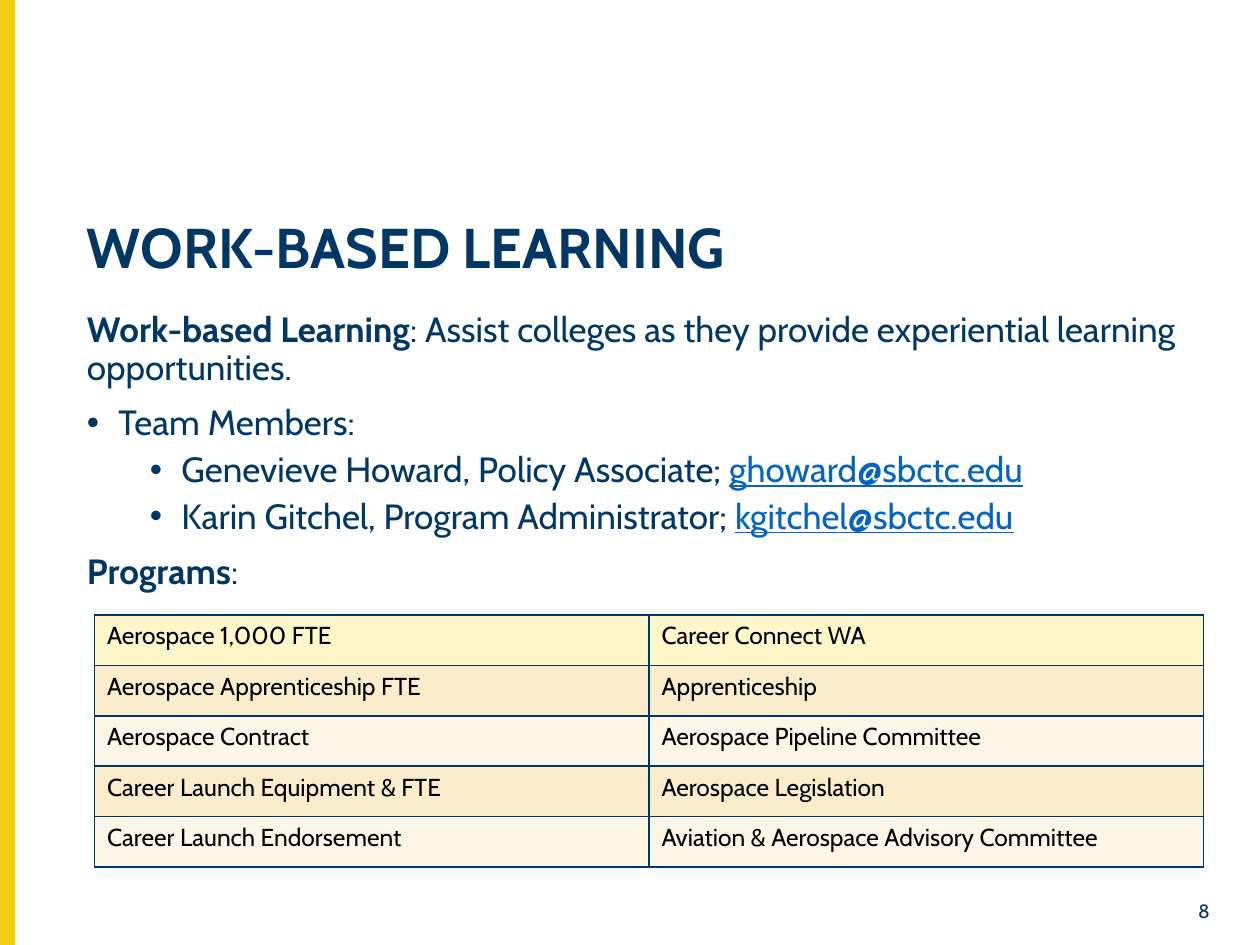
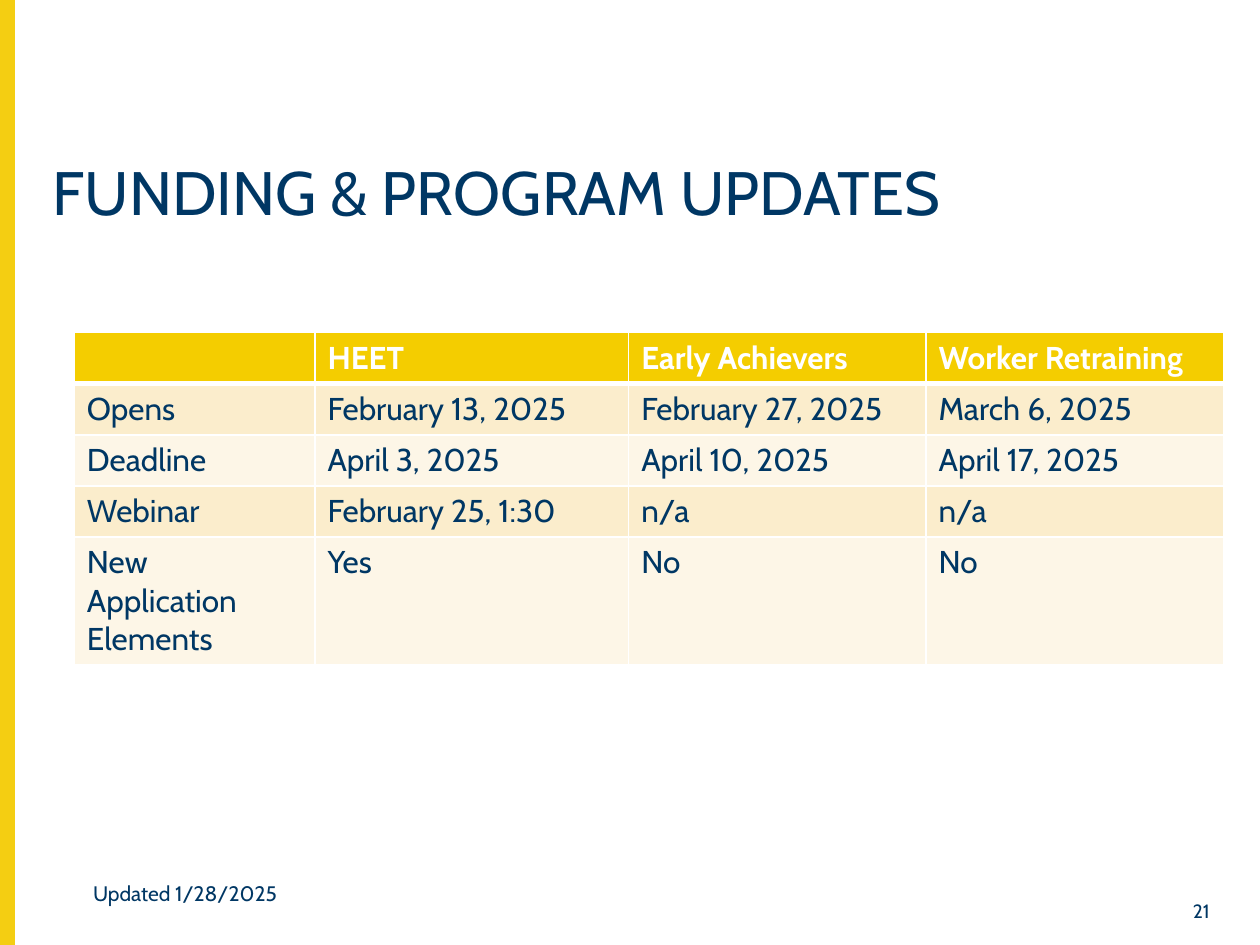
import pptx
import pptx.util
import pptx.dml.color
import pptx.enum.shapes
import pptx.enum.text
import pptx.oxml.ns
from lxml import etree

Pt = pptx.util.Pt
ALIGN = pptx.enum.text.PP_ALIGN

# Shared style
FONT = "Cabin"
COLORS = {"navy": "003764", "gold": "F4CE12", "header": "F4CD00", "pale": "FFF6CA",
          "band": "FBEDCC", "light": "FDF6E7", "link": "0563C1",
          "white": "FFFFFF", "black": "000000"}

# Content: body paragraphs are (kind, [(text, style), ...])
TEAM_BODY = [
    ("plain", [("Work-based Learning", "bold"),
               (": Assist colleges as they provide experiential learning opportunities.", "")]),
    ("bullet", [("Team Members:\u00a0", "")]),
    ("sub", [("Genevieve Howard, Policy Associate; ", ""), ("ghoward@sbctc.edu", "link")]),
    ("sub", [("Karin Gitchel, Program Administrator; ", ""), ("kgitchel@sbctc.edu", "link")]),
    ("plain", [("Programs", "bold"), (":", "")]),
]
PROGRAMS = [
    ("Aerospace 1,000 FTE", "Career Connect WA"),
    ("Aerospace Apprenticeship FTE", "Apprenticeship"),
    ("Aerospace Contract", "Aerospace Pipeline Committee"),
    ("Career Launch Equipment & FTE", "Aerospace Legislation"),
    ("Career Launch Endorsement", "Aviation & Aerospace Advisory Committee"),
]
FUNDING = [
    ("", "HEET", "Early Achievers", "Worker Retraining"),
    ("Opens", "February 13, 2025", "February 27, 2025", "March 6, 2025"),
    ("Deadline", "April 3, 2025", "April 10, 2025", "April 17, 2025"),
    ("Webinar", "February 25, 1:30", "n/a", "n/a"),
    ("New Application Elements", "Yes", "No", "No"),
]
# Paragraph kinds: level, left margin, indent, space before
KINDS = {"plain": (0, 0, 0, 10), "bullet": (0, 18, -18, 10), "sub": (1, 54, -18, 5)}


def rgb(name):
    return pptx.dml.color.RGBColor.from_string(COLORS[name])


def style(r, size, color="navy", bold=False):
    r.font.name, r.font.size, r.font.bold = FONT, Pt(size), bold
    r.font.color.rgb = rgb(color)


def place(sp, left, top, width, height):
    sp.left, sp.top, sp.width, sp.height = Pt(left), Pt(top), Pt(width), Pt(height)
    tf = sp.text_frame
    tf.word_wrap = True
    tf.auto_size = pptx.enum.text.MSO_AUTO_SIZE.NONE
    tf.vertical_anchor = pptx.enum.text.MSO_ANCHOR.TOP
    return tf


def add_text(s, text, box, size, align=ALIGN.LEFT):
    tf = place(s.shapes.add_textbox(0, 0, 0, 0), *box)
    tf.text = text
    tf.paragraphs[0].alignment = align
    style(tf.paragraphs[0].runs[0], size)


def add_slide(prs, layout, title, box, size, bold, number):
    """Slide with gold side band, title and page number."""
    s = prs.slides.add_slide(prs.slide_layouts[layout])
    band = s.shapes.add_shape(pptx.enum.shapes.MSO_SHAPE.RECTANGLE, 0, 0, Pt(8), prs.slide_height)
    band.shadow.inherit = False
    band.fill.solid()
    band.fill.fore_color.rgb = band.line.color.rgb = rgb("gold")
    band.line.width = Pt(1)

    tf = place(s.shapes.title, *box)
    tf.text = title
    p = tf.paragraphs[0]
    p.alignment, p.line_spacing = ALIGN.LEFT, 0.9
    style(p.runs[0], size, bold=bold)
    add_text(s, number, (661.7, 510.5, 36.7, 18.7), 11, ALIGN.RIGHT)
    return s


def fill_body(sp, paragraphs, box):
    tf = place(sp, *box)
    for i, (kind, runs) in enumerate(paragraphs):
        p = tf.paragraphs[0] if i == 0 else tf.add_paragraph()
        level, margin, indent, before = KINDS[kind]
        p.level = level
        pPr = p._p.get_or_add_pPr()
        pPr.set("marL", str(Pt(margin)))
        pPr.set("indent", str(Pt(indent)))
        if kind == "plain":
            etree.SubElement(pPr, pptx.oxml.ns.qn("a:buNone"))
        else:
            etree.SubElement(pPr, pptx.oxml.ns.qn("a:buFont"), typeface="Arial")
            etree.SubElement(pPr, pptx.oxml.ns.qn("a:buChar"), char="•")
        p.alignment, p.line_spacing = ALIGN.LEFT, 0.9
        p.space_before = Pt(before if i else 0)
        for text, look in runs:
            r = p.add_run()
            r.text = text
            style(r, 20, "link" if look == "link" else "navy", look == "bold")
            r.font.underline = look == "link"


def set_borders(cell, color, bottom=1, top=1):
    tcPr = cell._tc.get_or_add_tcPr()
    widths = {"lnL": 1, "lnR": 1, "lnT": top, "lnB": bottom}
    for i, (side, width) in enumerate(widths.items()):
        ln = etree.Element(pptx.oxml.ns.qn("a:" + side), w=str(Pt(width)))
        fill = etree.SubElement(ln, pptx.oxml.ns.qn("a:solidFill"))
        etree.SubElement(fill, pptx.oxml.ns.qn("a:srgbClr"), val=COLORS[color])
        tcPr.insert(i, ln)


def add_table(s, rows, left, top, widths, row_height, size, color, border, first_fill, header=False):
    """Banded table; the first row has its own fill and may be a header."""
    tbl = s.shapes.add_table(len(rows), len(widths), Pt(left), Pt(top), Pt(sum(widths)),
                             Pt(row_height * len(rows))).table
    tbl.first_row, tbl.horz_banding = header, False
    for col, width in zip(tbl.columns, widths):
        col.width = Pt(width)
    for i, row in enumerate(rows):
        tbl.rows[i].height = Pt(row_height)
        is_header = header and i == 0
        for j, text in enumerate(row):
            cell = tbl.cell(i, j)
            cell.fill.solid()
            cell.fill.fore_color.rgb = rgb(first_fill if i == 0 else "band" if i % 2 else "light")
            set_borders(cell, border, bottom=3 if is_header else 1, top=3 if header and i == 1 else 1)
            if text:
                cell.text_frame.text = text
                style(cell.text_frame.paragraphs[0].runs[0], size,
                      "white" if is_header else color, is_header)


def main():
    prs = pptx.Presentation()
    prs.slide_width, prs.slide_height = Pt(720), Pt(540)

    # Work-based learning: team and programs
    s = add_slide(prs, 1, "WORK-BASED LEARNING", (42.5, 122.4, 656.6, 39.6), 32, True, "8")
    fill_body(s.placeholders[1], TEAM_BODY, (42.5, 175, 656.6, 353.5))
    add_table(s, PROGRAMS, 54, 351.4, [316.8] * 2, 28.8, 14, "black", "navy", "pale")

    # Funding dates
    s = add_slide(prs, 5, "FUNDING & PROGRAM UPDATES", (23, 89.3, 656.6, 62.6), 35, False, "21")
    add_text(s, "Updated 1/28/2025", (46.1, 499.7, 144.7, 21.6), 12)
    add_table(s, FUNDING, 42.5, 190.1, [137.5, 179.3, 169.9, 169.9], 29.2, 18,
              "navy", "white", "header", header=True)

    prs.save("out.pptx")


if __name__ == "__main__":
    main()
